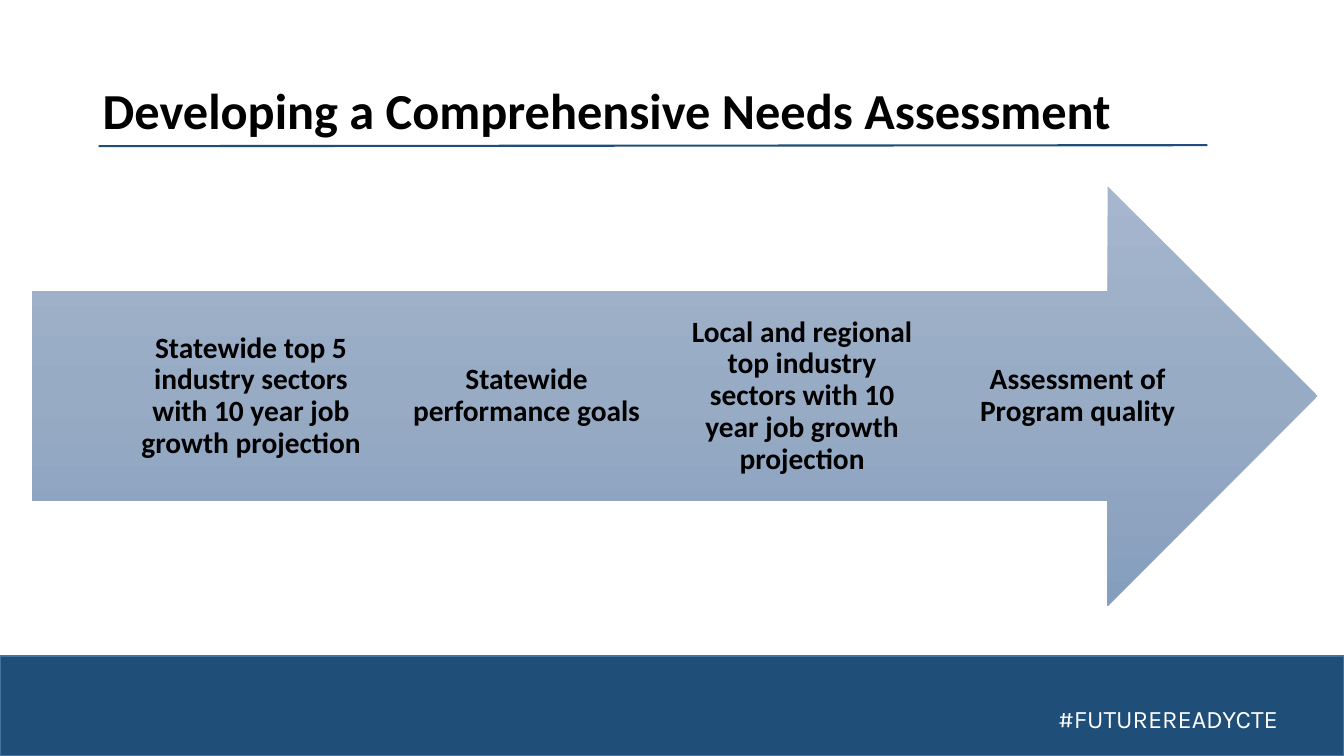
from copy import deepcopy
from dataclasses import dataclass

from lxml import etree
from pptx import Presentation
from pptx import util as u
from pptx.dml.color import RGBColor
from pptx.enum import shapes, text

Pt = u.Pt


@dataclass(frozen=True)
class Theme:
    """Hold the colours, fonts and type sizes of the slide."""
    ink: str = "000000"
    white: str = "FFFFFF"
    navy: str = "1F4E79"
    edge: str = "43739E"
    shades: tuple = ("A5B6CE", "98ABC4", "869EBE")
    main: str = "Calibri"
    tag: str = "Karla"
    head: int = 36
    step: int = 21
    note: int = 18


THEME = Theme()
STEPS = (
    "Statewide top 5 industry sectors with 10 year job growth projection",
    "Statewide performance goals",
    "Local and regional top industry sectors with 10 year job growth projection",
    "Assessment of Program quality",
)


def tint(code):
    """Turn a hex code into a colour."""
    return RGBColor.from_string(code)


def place(shape, box):
    """Move a shape to a box given in points."""
    shape.left, shape.top, shape.width, shape.height = map(Pt, box)


def write(shape, words, size, font=THEME.main, color=THEME.ink, bold=True,
          align=text.PP_ALIGN.LEFT, anchor=text.MSO_ANCHOR.MIDDLE,
          wrap=True, space=0.9, inset=(7.2, 3.6)):
    """Put formatted text into a shape."""
    frame = shape.text_frame
    frame.auto_size = text.MSO_AUTO_SIZE.NONE
    frame.word_wrap = wrap
    frame.vertical_anchor = anchor
    frame.margin_left = frame.margin_right = Pt(inset[0])
    frame.margin_top = frame.margin_bottom = Pt(inset[1])
    para = frame.paragraphs[0]
    para.alignment, para.line_spacing = align, space
    run = para.add_run()
    run.text = words
    run.font.name, run.font.size, run.font.bold = font, Pt(size), bold
    run.font.color.rgb = tint(color)


def header(slide, box):
    """Set the title and the rule beneath it."""
    left, top, width, height = box
    title = slide.shapes.title
    place(title, box)
    write(title, "Developing a Comprehensive Needs Assessment", THEME.head)
    start = left + 4.3
    rule = slide.shapes.add_connector(
        shapes.MSO_CONNECTOR.STRAIGHT, Pt(start), Pt(top + 75.6),
        Pt(start + 792), Pt(top + 74.9))
    rule.line.color.rgb = tint(THEME.navy)
    rule.line.width = Pt(1.5)
    props = rule._element.spPr
    etree.SubElement(props, props.nsmap["a"].join("{}") + "effectLst")


def shade(fill, props):
    """Fill a shape with the three shades from top to bottom."""
    fill.gradient()
    fill.gradient_angle = 270
    stops = props.find(".//a:gsLst", props.nsmap)
    stops.insert(1, deepcopy(stops[0]))
    for stop, pos, code in zip(fill.gradient_stops, (0, 0.5, 1), THEME.shades):
        stop.position = pos
        stop.color.rgb = tint(code)


def flow(slide, box):
    """Draw the arrow and spread the steps along its shaft."""
    left, top, width, height = box
    arrow = slide.shapes.add_shape(
        shapes.MSO_SHAPE.RIGHT_ARROW, *map(Pt, box))
    arrow.shadow.inherit = False
    arrow.line.fill.background()
    shade(arrow.fill, arrow._element.spPr)
    pitch, wide = 196.8, 164.2
    for i, words in enumerate(STEPS):
        label = slide.shapes.add_textbox(
            Pt(left + 74.2 + i * pitch), Pt(top + height / 4),
            Pt(wide), Pt(height / 2))
        write(label, words, THEME.step, align=text.PP_ALIGN.CENTER,
              inset=(0, 16.5))


def footer(slide, box):
    """Draw the bottom band with its hashtag."""
    left, top, width, height = box
    band = slide.shapes.add_shape(shapes.MSO_SHAPE.RECTANGLE, *map(Pt, box))
    band.shadow.inherit = False
    band.fill.solid()
    band.fill.fore_color.rgb = tint(THEME.navy)
    band.line.color.rgb = tint(THEME.edge)
    band.line.width = Pt(1)
    tag = slide.shapes.add_textbox(
        Pt(left + width - 211.2), Pt(top + 30.2), Pt(172), Pt(28.8))
    write(tag, "#FUTUREREADYCTE", THEME.note, font=THEME.tag,
          color=THEME.white, bold=False, anchor=text.MSO_ANCHOR.TOP,
          wrap=False, space=1.0)


def main():
    """Build and save the slide."""
    deck = Presentation()
    deck.slide_width, deck.slide_height = Pt(960), Pt(540)
    slide = deck.slides.add_slide(deck.slide_layouts[5])
    footer(slide, (0, 468.7, 960, 71.3))
    header(slide, (66.2, 28.8, 828, 104.4))
    flow(slide, (23, 133.2, 918, 299.5))
    deck.save("out.pptx")


if __name__ == "__main__":
    main()
